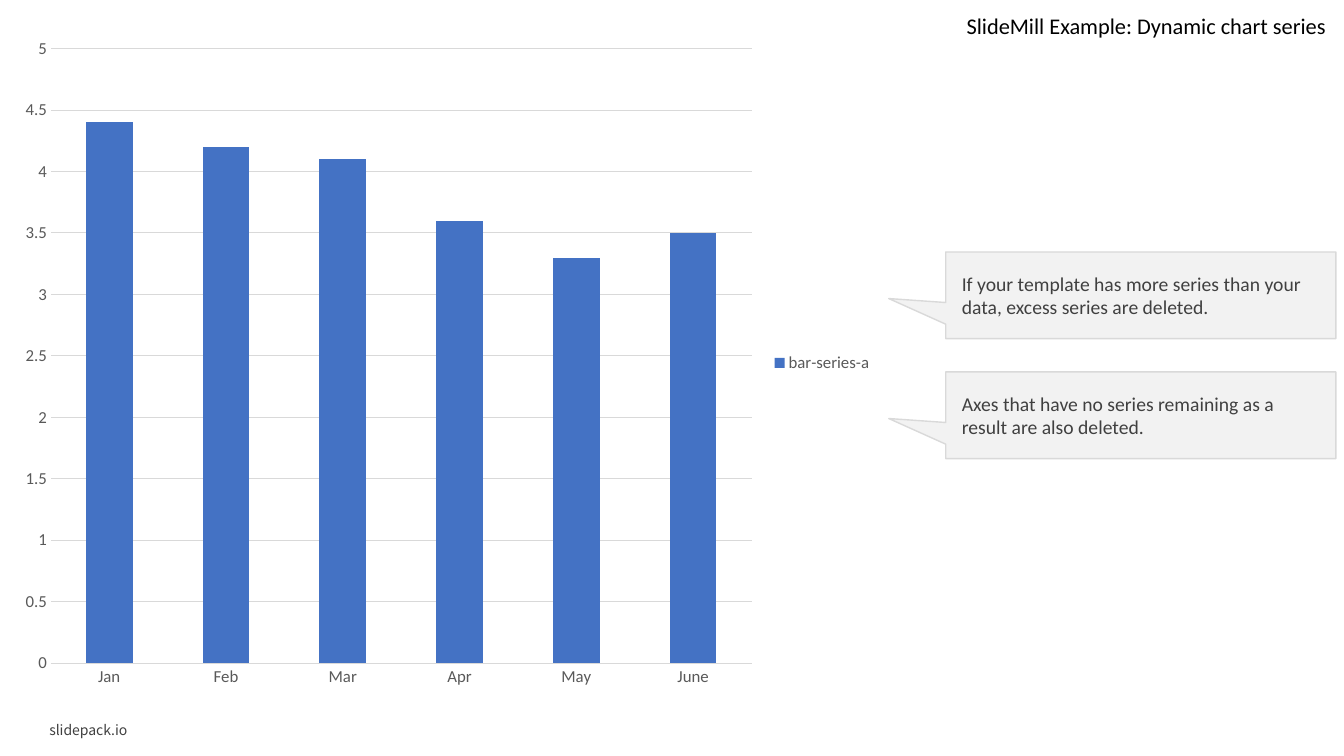
import pptx
import pptx.chart.data
import pptx.dml.color
import pptx.enum.chart
import pptx.enum.shapes
import pptx.enum.text
import pptx.util

# Content
TITLE = "SlideMill Example: Dynamic chart series"
SITE = "slidepack.io"
NOTES = [
    "If your template has more series than your data, excess series are deleted.",
    "Axes that have no series remaining as a result are also deleted.",
]
MONTHS = ["Jan", "Feb", "Mar", "Apr", "May", "June"]
SERIES = ("bar-series-a", [4.4, 4.2, 4.1, 3.6, 3.3, 3.5])

# Look and layout, in inches
FONT = "Calibri"
INK, GREY, RULE, PALE, BLUE = "404040", "595959", "D9D9D9", "F2F2F2", "4472C4"
WIDE, HIGH = 13.33, 7.5
SIDE, COL = 9.38, 3.87
TOP, TALL, STEP = 2.5, 0.86, 1.19

Inch, Pt = pptx.util.Inches, pptx.util.Pt
Anchor = pptx.enum.text.MSO_ANCHOR
Align = pptx.enum.text.PP_ALIGN


def tint(code):
    return pptx.dml.color.RGBColor.from_string(code)


def style(font, size, color, face=FONT):
    font.size, font.name = Pt(size), face
    font.color.rgb = tint(color)


def write(shape, text, size=14, color=INK, face=FONT, align=Align.LEFT,
          anchor=Anchor.MIDDLE, wrap=True, inset=None):
    frame = shape.text_frame
    frame.word_wrap, frame.vertical_anchor = wrap, anchor
    if inset is not None:
        frame.margin_left = frame.margin_right = Inch(inset)
        frame.margin_top = frame.margin_bottom = Inch(inset)
    para = frame.paragraphs[0]
    para.alignment = align
    run = para.add_run()
    run.text = text
    style(run.font, size, color, face)


def box(left, top, width, height):
    return [Inch(n) for n in (left, top, width, height)]


def rule(line, color=RULE, width=0.75):
    line.color.rgb = tint(color)
    line.width = Pt(width)


deck = pptx.Presentation()
deck.slide_width, deck.slide_height = Inch(WIDE), Inch(HIGH)
slide = deck.slides.add_slide(deck.slide_layouts[6])
shapes = slide.shapes

# Footer and title
write(shapes.add_textbox(*box(0.39, 7.12, 2.91, 0.25)), SITE,
      size=10, face="Noto Sans CJK JP")
write(shapes.add_textbox(*box(SIDE, 0.07, COL, 0.37)), TITLE, size=16,
      color="000000", align=Align.RIGHT, anchor=Anchor.TOP, wrap=False)

# Column chart
data = pptx.chart.data.CategoryChartData()
data.categories = MONTHS
data.add_series(*SERIES)
kind = pptx.enum.chart.XL_CHART_TYPE.COLUMN_CLUSTERED
chart = shapes.add_chart(kind, *box(0.08, 0.25, 8.68, 6.7), data).chart
style(chart.font, 10, "000000")
chart.has_title = False

plot = chart.plots[0]
plot.gap_width = 150
plot.vary_by_categories = False
fill = plot.series[0].format.fill
fill.solid()
fill.fore_color.rgb = tint(BLUE)

# Axes and legend
months, scale = chart.category_axis, chart.value_axis
for axis in (months, scale):
    axis.major_tick_mark = pptx.enum.chart.XL_TICK_MARK.NONE
    axis.minor_tick_mark = pptx.enum.chart.XL_TICK_MARK.NONE
    style(axis.tick_labels.font, 12, GREY)
rule(months.format.line)
scale.format.line.fill.background()
scale.has_major_gridlines = True
rule(scale.major_gridlines.format.line)

chart.has_legend = True
chart.legend.position = pptx.enum.chart.XL_LEGEND_POSITION.RIGHT
chart.legend.include_in_layout = False
style(chart.legend.font, 12, GREY)

# Callouts
form = pptx.enum.shapes.MSO_SHAPE.RECTANGULAR_CALLOUT
for row, text in enumerate(NOTES):
    note = shapes.add_shape(form, *box(SIDE, TOP + row * STEP, COL, TALL))
    note.adjustments[0], note.adjustments[1] = -0.646, 0.038
    note.shadow.inherit = False
    note.fill.solid()
    note.fill.fore_color.rgb = tint(PALE)
    rule(note.line, width=1)
    write(note, text, inset=0.16)

deck.save("out.pptx")
